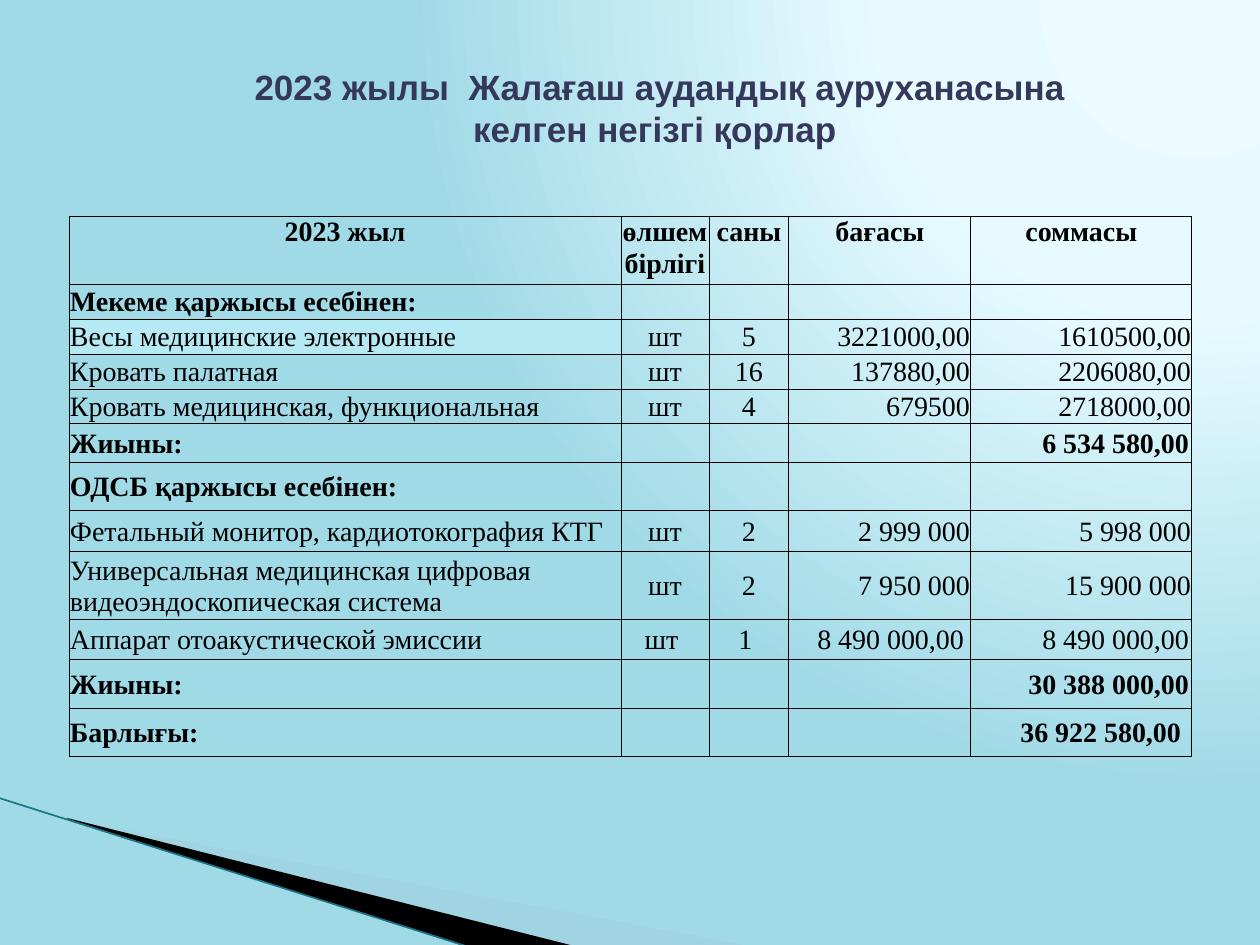
import pptx
import pptx.dml.color
import pptx.enum.shapes
import pptx.enum.text
import pptx.oxml
import pptx.oxml.ns
import pptx.util
from lxml import etree

PX = 914400 / 126
qn = pptx.oxml.ns.qn
ALIGN = pptx.enum.text.PP_ALIGN
ANCHOR = pptx.enum.text.MSO_ANCHOR


def px(value):
    return pptx.util.Emu(round(value * PX))


def color(value):
    return pptx.dml.color.RGBColor.from_string(value)


presentation = pptx.Presentation()
presentation.slide_width = px(1260)
presentation.slide_height = px(945)
slide = presentation.slides.add_slide(presentation.slide_layouts[6])

slide.background.fill.gradient()
gradient = slide.element.find(".//" + qn("a:gradFill"))
for child in list(gradient):
    gradient.remove(child)
stops = etree.SubElement(gradient, qn("a:gsLst"))
for position, value in ((0, "EBFBFF"), (40, "E7FBFF"), (100, "A1DAE7")):
    stop = etree.SubElement(stops, qn("a:gs"), pos=str(position * 1000))
    etree.SubElement(stop, qn("a:srgbClr"), val=value)
circle = etree.SubElement(gradient, qn("a:path"), path="circle")
etree.SubElement(circle, qn("a:fillToRect"), l="95000", t="-106000", r="5000", b="206000")

wedges = [
    ((98, 689, 524, 199), [(69, 820), (750, 946), (575, 946), (69, 819)], "A0CBDC", 40),
    ((-8, 798, 524, 116), [(67, 818), (574, 946), (467, 947), (68, 819)], "000000", 100),
]
for (left, top, width, height), points, fill, opacity in wedges:
    builder = slide.shapes.build_freeform(*points[0], scale=PX)
    builder.add_line_segments(points[1:], close=True)
    wedge = builder.convert_to_shape()
    outline = wedge.element.find(".//" + qn("a:path"))
    outline.set("w", str(width))
    outline.set("h", str(height))
    for vertex, (x, y) in zip(outline.iter(qn("a:pt")), points):
        vertex.set("x", str(x - left))
        vertex.set("y", str(y - top))
    wedge.left, wedge.top, wedge.width, wedge.height = px(left), px(top), px(width), px(height)
    wedge.shadow.inherit = False
    wedge.fill.solid()
    wedge.fill.fore_color.rgb = color(fill)
    wedge.line.fill.background()
    if opacity < 100:
        fill_color = wedge.element.spPr.find(".//" + qn("a:srgbClr"))
        etree.SubElement(fill_color, qn("a:alpha"), val=str(opacity * 1000))

edge = slide.shapes.add_connector(
    pptx.enum.shapes.MSO_CONNECTOR.STRAIGHT, px(-1), px(798), px(469), px(947)
)
edge.line.color.rgb = color("1B7587")
edge.line.width = pptx.util.Pt(0.95)
etree.SubElement(edge.element.spPr, qn("a:effectLst"))

title = slide.shapes.add_textbox(px(109), px(59), px(1092), px(97))
title.text_frame.word_wrap = True
title_lines = [" 2023 жылы  Жалағаш аудандық ауруханасына", "келген негізгі қорлар"]
for index, text in enumerate(title_lines):
    paragraph = title.text_frame.paragraphs[0] if index == 0 else title.text_frame.add_paragraph()
    paragraph.alignment = ALIGN.CENTER
    run = paragraph.add_run()
    run.text = text
    run.font.name = "Arial"
    run.font.size = pptx.util.Pt(20)
    run.font.bold = True
    run.font.color.rgb = color("35385A")

rows = [
    (68, True, ["2023 жыл", "өлшем бірлігі", "саны", "бағасы", "соммасы"]),
    (35, True, ["Мекеме қаржысы есебінен:", "", "", "", ""]),
    (35, False, ["Весы медицинские электронные", "шт", "5", "3221000,00", "1610500,00"]),
    (35, False, ["Кровать палатная", "шт", "16", "137880,00", "2206080,00"]),
    (34, False, ["Кровать медицинская, функциональная", "шт", "4", "679500", "2718000,00"]),
    (39, True, ["Жиыны:", "", "", "", "6 534 580,00"]),
    (48, True, ["ОДСБ қаржысы есебінен:", "", "", "", ""]),
    (41, False, ["Фетальный монитор, кардиотокография КТГ", "шт", "2", "2 999 000", "5 998 000"]),
    (68, False, ["Универсальная медицинская цифровая видеоэндоскопическая система",
                 "шт", "2", "7 950 000", "15 900 000"]),
    (40, False, ["Аппарат отоакустической эмиссии", "шт", "1", "8 490 000,00", "8 490 000,00"]),
    (49, True, ["Жиыны:", "", "", "", "30 388 000,00"]),
    (48, True, ["Барлығы:", "", "", "", "36 922 580,00"]),
]
column_widths = [552, 88, 80, 182, 221]
column_alignments = [ALIGN.LEFT, ALIGN.CENTER, ALIGN.CENTER, ALIGN.RIGHT, ALIGN.RIGHT]
right_margins = {(9, 1): 8, (9, 2): 8, (9, 3): 7, (9, 4): 3, (5, 4): 3, (10, 4): 3, (11, 4): 11}

frame = slide.shapes.add_table(
    len(rows), len(column_widths), px(69), px(216),
    px(sum(column_widths)), px(sum(row[0] for row in rows)),
)
table = frame.table
table.first_row = False
table.horz_banding = False
for column, width in zip(table.columns, column_widths):
    column.width = px(width)

for row_index, (height, bold, texts) in enumerate(rows):
    table.rows[row_index].height = px(height)
    for column_index, text in enumerate(texts):
        cell = table.cell(row_index, column_index)
        cell.margin_left = cell.margin_top = px(1)
        cell.margin_right = px(right_margins.get((row_index, column_index), 1))
        cell.margin_bottom = 0
        cell.vertical_anchor = ANCHOR.TOP if row_index == 0 else ANCHOR.MIDDLE
        properties = cell._tc.get_or_add_tcPr()
        for side in ("a:lnL", "a:lnR", "a:lnT", "a:lnB"):
            border = etree.SubElement(properties, qn(side), w="6350")
            border_fill = etree.SubElement(border, qn("a:solidFill"))
            etree.SubElement(border_fill, qn("a:srgbClr"), val="000000")
        if (row_index, column_index) == (2, 0):
            cell.fill.solid()
            cell.fill.fore_color.rgb = color("B5E9F4")
        else:
            cell.fill.background()
        paragraph = cell.text_frame.paragraphs[0]
        paragraph.alignment = ALIGN.CENTER if row_index == 0 else column_alignments[column_index]
        if text:
            run = paragraph.add_run()
            run.text = text
            run.font.name = "Times New Roman"
            run.font.size = pptx.util.Pt(16)
            run.font.bold = bold
            run.font.color.rgb = color("000000")
        else:
            etree.SubElement(paragraph._p, qn("a:endParaRPr"), sz="1600")

presentation.save("out.pptx")
